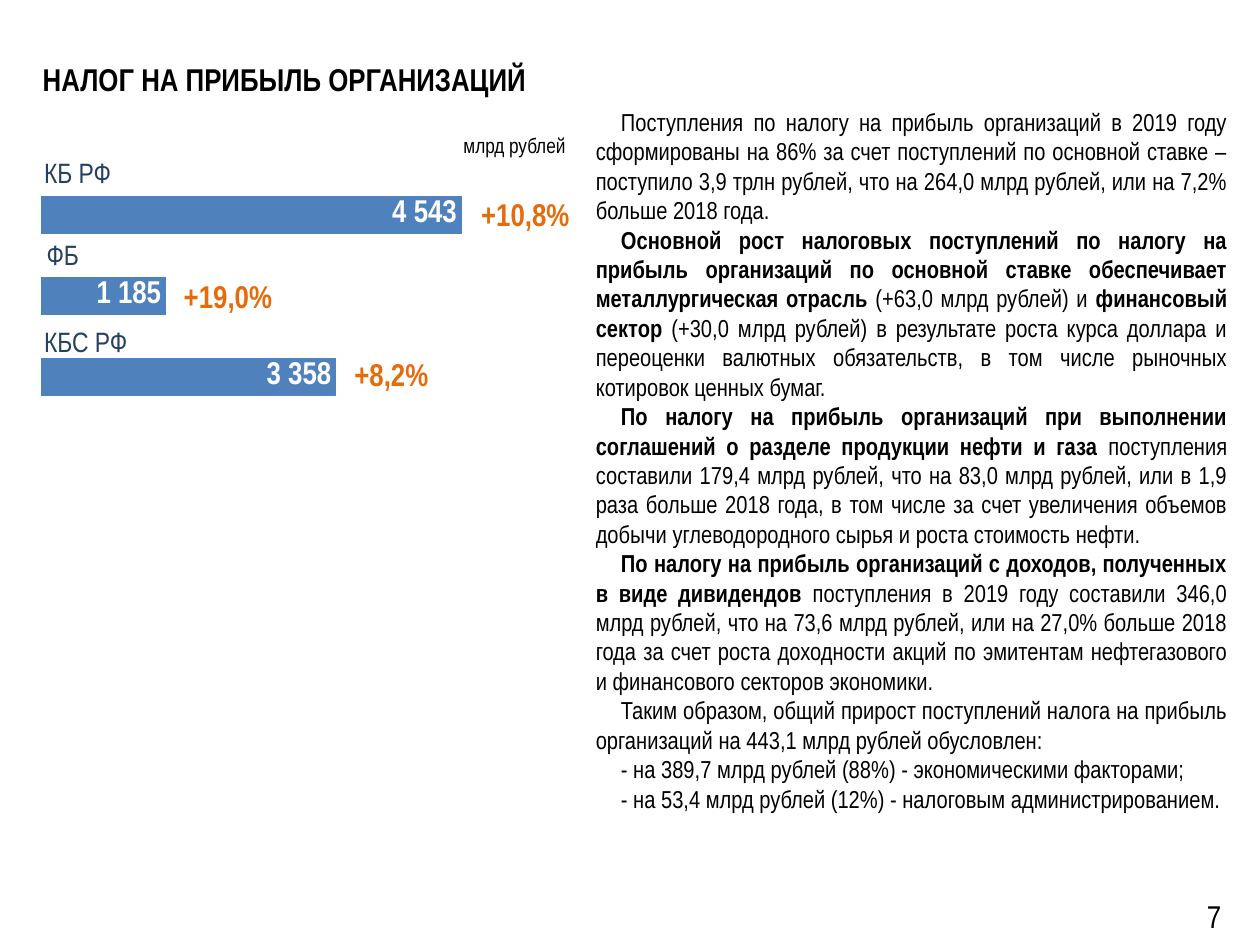
from lxml import etree
from pptx import Presentation
from pptx.chart.data import CategoryChartData
from pptx.dml.color import RGBColor
from pptx.enum.chart import XL_CHART_TYPE, XL_LABEL_POSITION
from pptx.enum.text import MSO_ANCHOR, PP_ALIGN
from pptx.oxml.ns import qn
from pptx.util import Inches, Pt

BAR = XL_CHART_TYPE.BAR_CLUSTERED
IN_END = XL_LABEL_POSITION.INSIDE_END
TOP, MID = MSO_ANCHOR.TOP, MSO_ANCHOR.MIDDLE
LEFT, RIGHT = PP_ALIGN.LEFT, PP_ALIGN.RIGHT
MIDDLE, FULL = PP_ALIGN.CENTER, PP_ALIGN.JUSTIFY

BLACK = RGBColor(0x00, 0x00, 0x00)
WHITE = RGBColor(0xFF, 0xFF, 0xFF)
BLUE = RGBColor(0x4F, 0x81, 0xBD)
NAVY = RGBColor(0x25, 0x40, 0x61)
ORANGE = RGBColor(0xE4, 0x6C, 0x0A)
FONT = "Arial Narrow"

# The grid has 100 columns and 75 rows of square cells.
COLS, ROWS = 100, 75
CELL = Inches(0.1)
WIDE, TIGHT = (0.1, 0.05), (0.11, 0.06)

# Budget level, value, shown value, growth; then the places of the level
# and growth texts in the chart's box: (column, row, width, height).
BARS = [
    ("КБС РФ", 1790, "3 358", "+8,2%", (0.6, 11.6, 9.7, 6.5), (23.7, 13.8, 9.6, 7.1)),
    ("ФБ", 760, "1 185", "+19,0%", (0.8, 4.7, 9.7, 6.5), (11.3, 7.6, 9.6, 7.1)),
    ("КБ РФ", 2550, "4 543", "+10,8%", (0.6, -1.8, 9.7, 6.5), (34.9, 1.1, 9.6, 7.1)),
]
PLOT = {"x": 0.03, "y": 0.07, "w": 0.83, "h": 0.86}

# Each paragraph is a list of (text, bold) runs.
STORY = [
    [("Поступления по налогу на прибыль организаций в 2019 году сформированы "
      "на 86% за счет поступлений по основной ставке – поступило 3,9 трлн "
      "рублей, что на 264,0 млрд рублей, или на 7,2% больше 2018 года.", False)],
    [("Основной рост налоговых поступлений по налогу на прибыль организаций "
      "по основной ставке обеспечивает металлургическая отрасль", True),
     (" (+63,0 млрд рублей) и ", False),
     ("финансовый сектор", True),
     (" (+30,0 млрд рублей) в результате роста курса доллара и переоценки "
      "валютных обязательств, в том числе рыночных котировок ценных бумаг.", False)],
    [("По налогу на прибыль организаций при выполнении соглашений о разделе "
      "продукции нефти и газа", True),
     (" поступления составили 179,4 млрд рублей, что на 83,0 млрд рублей, "
      "или в 1,9 раза больше 2018 года, в том числе за счет увеличения объемов "
      "добычи углеводородного сырья и роста стоимость нефти.", False)],
    [("По налогу на прибыль организаций с доходов, полученных в виде "
      "дивидендов", True),
     (" поступления в 2019 году составили 346,0 млрд рублей, что на 73,6 млрд "
      "рублей, или на 27,0% больше 2018 года за счет роста доходности акций по "
      "эмитентам нефтегазового и финансового секторов экономики.", False)],
    [("Таким образом, общий прирост поступлений налога на прибыль организаций "
      "на 443,1 млрд рублей обусловлен:", False)],
    [("- на 389,7 млрд рублей (88%) - экономическими факторами;", False)],
    [("- на 53,4 млрд рублей (12%) - налоговым администрированием.", False)],
]


def span(box):
    """Turn grid cells into lengths."""
    return [round(n * CELL) for n in box]


def style(font, size, color, bold=False):
    font.name, font.size, font.bold = FONT, Pt(size), bold
    font.color.rgb = color


def add_text(slide, box, paras, size, color=BLACK, align=LEFT, anchor=MID,
             inset=WIDE, wrap=True, line=None, indent=0):
    frame = slide.shapes.add_textbox(*span(box)).text_frame
    frame.word_wrap, frame.vertical_anchor = wrap, anchor
    frame.margin_left = frame.margin_right = Inches(inset[0])
    frame.margin_top = frame.margin_bottom = Inches(inset[1])
    for i, runs in enumerate(paras):
        para = frame.add_paragraph() if i else frame.paragraphs[0]
        para.alignment = align
        if line:
            para.line_spacing = Pt(line)
        if indent:
            para._p.get_or_add_pPr().set("indent", str(Inches(indent)))
        for text, bold in runs:
            run = para.add_run()
            run.text = text
            style(run.font, size, color, bold)


def set_plot(chart):
    """Fix the inner plot area as shares of the chart."""
    area = chart._chartSpace.chart.plotArea
    for old in area.findall(qn("c:layout")):
        area.remove(old)
    layout = etree.Element(qn("c:layout"))
    area.insert(0, layout)
    manual = etree.SubElement(layout, qn("c:manualLayout"))
    parts = {"layoutTarget": "inner", "xMode": "edge", "yMode": "edge", **PLOT}
    for tag, val in parts.items():
        etree.SubElement(manual, qn("c:" + tag)).set("val", str(val))


def add_bars(slide, box):
    data = CategoryChartData(number_format="#,##0")
    data.categories = [str(i + 1) for i in range(len(BARS))]
    data.add_series("Series 1", [bar[1] for bar in BARS])
    chart = slide.shapes.add_chart(BAR, *span(box), data).chart
    chart.has_legend = chart.has_title = False
    chart.font.name, chart.font.size = "Calibri", Pt(18)
    chart.font.color.rgb = BLACK
    set_plot(chart)
    axis = chart.value_axis
    axis.minimum_scale, axis.maximum_scale = 0, 3000
    axis.has_major_gridlines = False
    axis.visible = chart.category_axis.visible = False

    plot = chart.plots[0]
    plot.gap_width, plot.vary_by_categories = 109, False
    series = plot.series[0]
    series.format.fill.solid()
    series.format.fill.fore_color.rgb = BLUE
    labels = series.data_labels
    labels.show_value, labels.position = True, IN_END
    labels.number_format, labels.number_format_is_linked = "#,##0", False
    style(labels.font, 18, WHITE, True)
    for i, bar in enumerate(BARS):
        label = series.points[i].data_label
        run = label.text_frame.paragraphs[0].add_run()
        run.text = bar[2]
        style(run.font, 18, WHITE, True)
        label.position = IN_END


def add_panel(slide, box):
    """Bars with their level names, growth rates and unit."""
    def inner(part):
        return box[0] + part[0], box[1] + part[1], part[2], part[3]

    add_bars(slide, box)
    for level, _, _, growth, name_box, rate_box in BARS:
        add_text(slide, inner(rate_box), [[(growth, True)]], 18, ORANGE,
                 align=RIGHT, inset=TIGHT, wrap=False)
        add_text(slide, inner(name_box), [[(level, False)]], 16, NAVY,
                 inset=TIGHT, wrap=False, line=18)
    add_text(slide, inner((34, -2.3, 12.2, 5)), [[("млрд рублей", False)]], 12,
             anchor=TOP)


def main():
    deck = Presentation()
    deck.slide_width, deck.slide_height = COLS * CELL, ROWS * CELL
    slide = deck.slides.add_slide(deck.slide_layouts[6])
    add_text(slide, (2.4, 0, 95.5, 12.5),
             [[("НАЛОГ НА ПРИБЫЛЬ ОРГАНИЗАЦИЙ", True)]], 18)
    add_panel(slide, (1.8, 12.3, 47.4, 22.4))
    add_text(slide, (46.3, 8, 52.1, 57.6), STORY, 14, align=FULL, anchor=TOP,
             indent=0.2)
    add_text(slide, (92.4, 68.3, 7.9, 7.6), [[("7", False)]], 18, align=MIDDLE,
             inset=TIGHT, line=30.1)
    deck.save("out.pptx")


if __name__ == "__main__":
    main()
